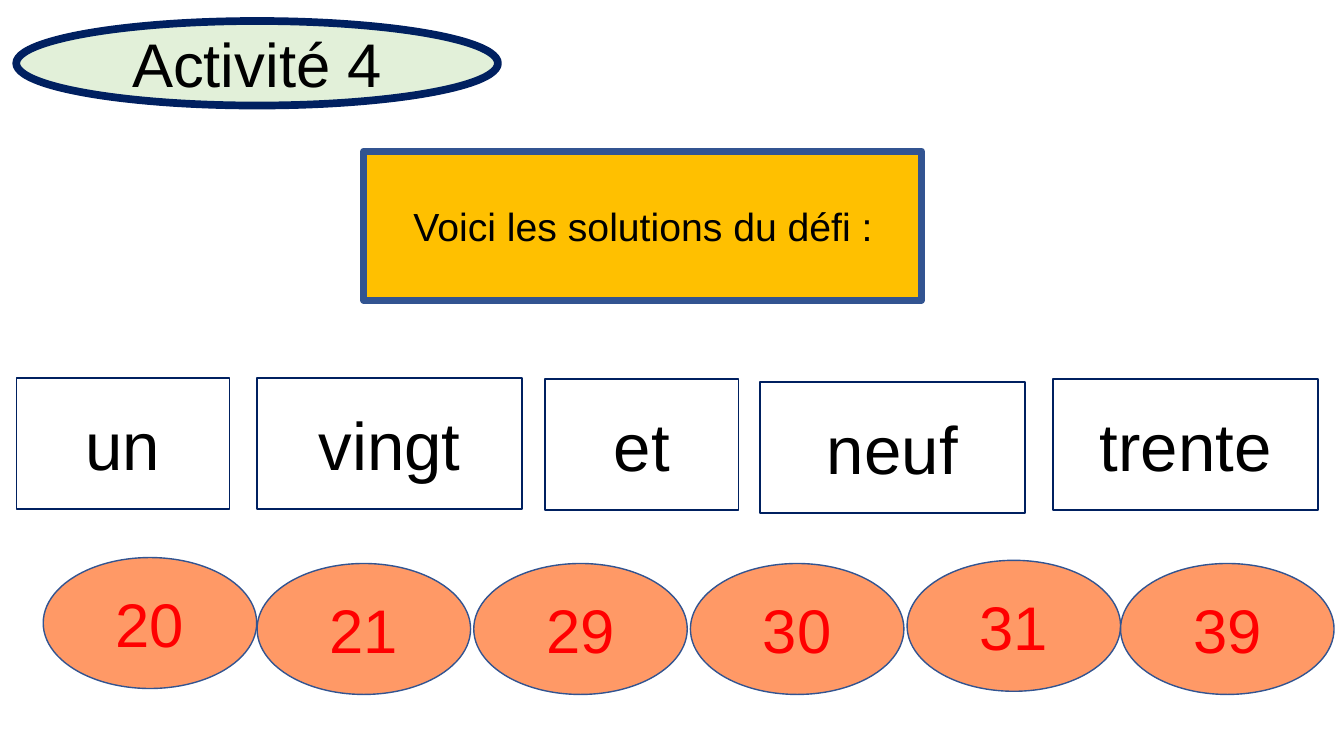
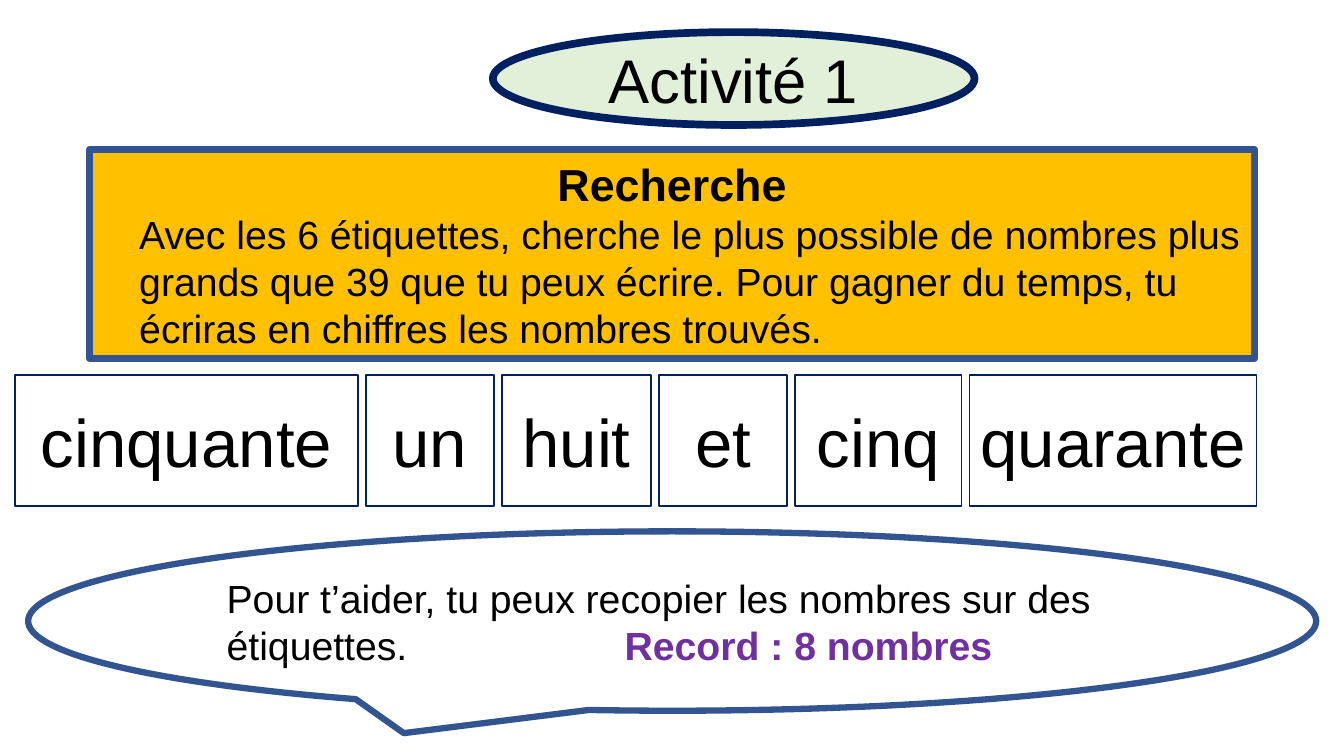
"""Build two French number-word activity slides."""
from lxml import etree
from pptx import Presentation
from pptx.dml.color import RGBColor
from pptx.enum.shapes import MSO_SHAPE as SHAPE
from pptx.enum.text import MSO_ANCHOR as ANCHOR, PP_ALIGN as ALIGN
from pptx.oxml.ns import qn
from pptx.util import Cm, Pt

FONT = "Arial"
BLACK, WHITE, NAVY, BLUE = "000000", "FFFFFF", "002060", "325491"
GREEN, GOLD, ORANGE, RED, PURPLE = "E2F0D9", "FFC000", "FF9966", "FF0000", "7030A0"
TITLE = dict(kind=SHAPE.OVAL, fill=GREEN, line=NAVY, weight=5.5)
BANNER = dict(kind=SHAPE.RECTANGLE, fill=GOLD, line=BLUE, weight=5)
LABEL = dict(kind=SHAPE.RECTANGLE, fill=WHITE, line=NAVY, weight=1)
NUMBER = dict(kind=SHAPE.OVAL, fill=ORANGE, line=BLUE, weight=1)
CALLOUT = dict(kind=SHAPE.OVAL_CALLOUT, fill=WHITE, line=BLUE, weight=4.5)
TITLE_W, CARD_H, NUMBER_W, INDENT = 12.14, 3.3, 5.38, 1


def add_box(s, box, kind, fill, line, weight):
    sp = s.shapes.add_shape(kind, *[Cm(v) for v in box])
    sp.shadow.inherit = False
    sp.fill.solid()
    sp.fill.fore_color.rgb = RGBColor.from_string(fill)
    sp.line.color.rgb = RGBColor.from_string(line)
    sp.line.width = Pt(weight)
    tf = sp.text_frame
    tf.word_wrap = True
    tf.vertical_anchor = ANCHOR.MIDDLE
    return tf.paragraphs[0]


def write(p, text, size=28, color=BLACK, bold=False, align=ALIGN.CENTER, indent=0):
    p.alignment = align
    if indent:
        p._p.get_or_add_pPr().set("marL", str(Cm(indent)))
    r = p.add_run()
    r.text = text
    r.font.name = FONT
    r.font.size = Pt(size)
    r.font.bold = bold
    r.font.color.rgb = RGBColor.from_string(color)


prs = Presentation()
prs.slide_width, prs.slide_height = Cm(33.87), Cm(19.05)
blank = prs.slide_layouts[6]

s = prs.slides.add_slide(blank)
write(add_box(s, (0.41, 0.53, TITLE_W, 2.13), **TITLE), "Activité 4", size=44)
p = add_box(s, (9.17, 3.81, 14.05, 3.76), **BANNER)
write(p, "Voici les solutions du défi :", align=ALIGN.LEFT, indent=INDENT)

for word, x, y, w in [
    ("un", 0.41, 9.53, 5.38),
    ("vingt", 6.48, 9.53, 6.68),
    ("et", 13.74, 9.55, 4.88),
    ("neuf", 19.15, 9.63, 6.68),
    ("trente", 26.54, 9.55, 6.68),
]:
    write(add_box(s, (x, y, w, CARD_H), **LABEL), word, size=48)

for number, x, y in [
    ("20", 1.09, 14.05),
    ("21", 6.48, 14.2),
    ("29", 11.94, 14.2),
    ("30", 17.4, 14.2),
    ("31", 22.86, 14.12),
    ("39", 28.24, 14.2),
]:
    write(add_box(s, (x, y, NUMBER_W, CARD_H), **NUMBER), number, size=44, color=RED)

s = prs.slides.add_slide(blank)
write(add_box(s, (12.42, 0.81, TITLE_W, 2.34), **TITLE), "Activité 1", size=44)
p = add_box(s, (2.26, 3.76, 29.36, 5.28), **BANNER)
write(p, "Recherche", size=32, bold=True)
p = s.shapes[-1].text_frame.add_paragraph()
write(p, "Avec les 6 étiquettes, cherche le plus possible de nombres plus grands que 39 "
         "que tu peux écrire. Pour gagner du temps, tu écriras en chiffres les nombres trouvés.",
      align=ALIGN.LEFT, indent=INDENT)

x, gap = 0.38, 0.2
for word, w in [("cinquante", 8.64), ("un", 3.23), ("huit", 3.76),
                ("et", 3.23), ("cinq", 4.19), ("quarante", 7.24)]:
    write(add_box(s, (x, 9.45, w, CARD_H), **LABEL), word, size=48)
    x += w + gap

p = add_box(s, (0.71, 13.39, 32.46, 4.52), **CALLOUT)
tabs = etree.SubElement(p._p.get_or_add_pPr(), qn("a:tabLst"))
etree.SubElement(tabs, qn("a:tab"), pos=str(Cm(10.03)), algn="l")
write(p, "Pour t’aider, tu peux recopier les nombres sur des étiquettes.\t", align=ALIGN.LEFT)
write(p, "Record : 8 nombres", color=PURPLE, bold=True, align=ALIGN.LEFT)

prs.save("out.pptx")
